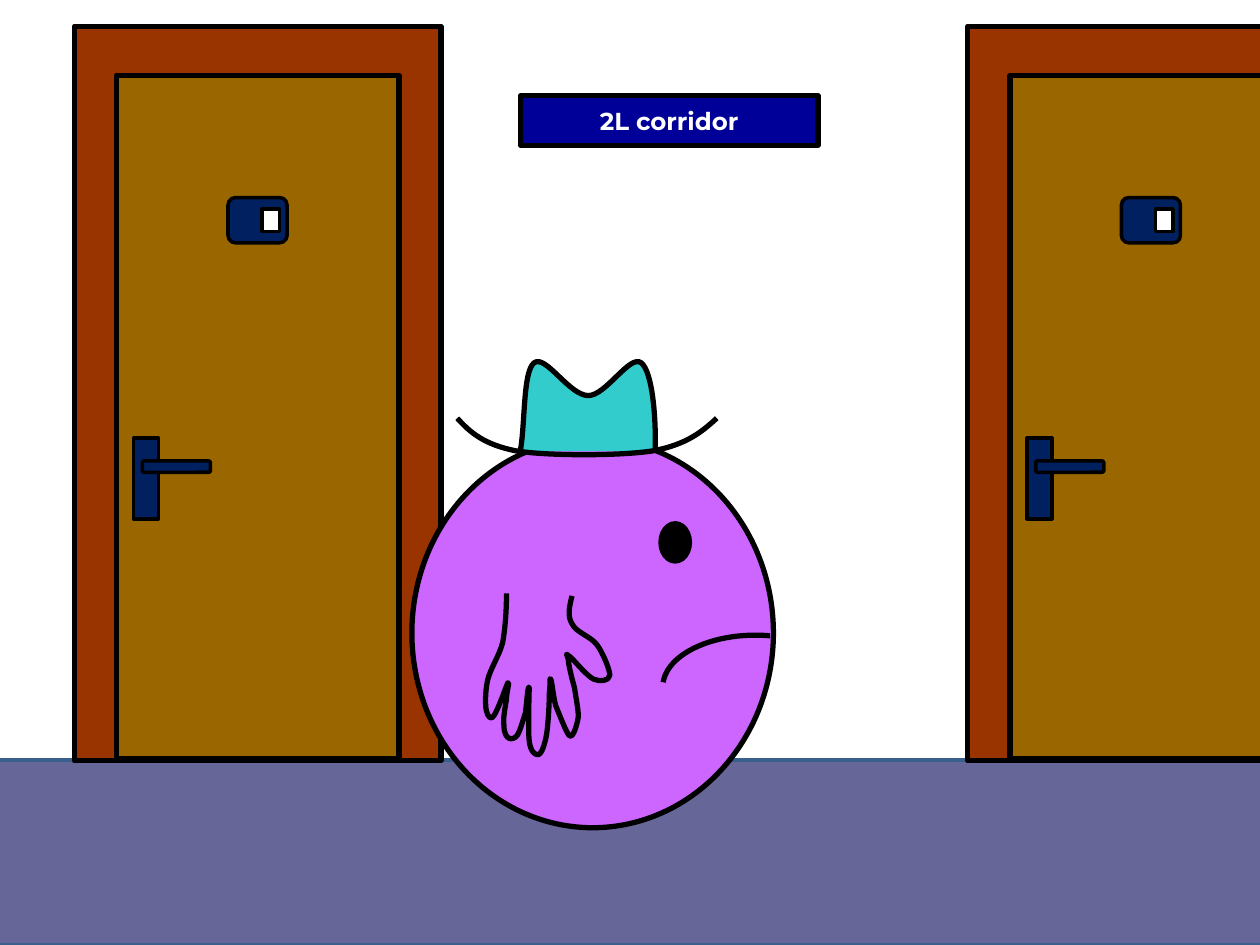
from pptx import Presentation
from pptx.util import Pt
from pptx.dml.color import RGBColor
from pptx.enum.shapes import MSO_SHAPE as Kind
from pptx.enum.text import PP_ALIGN as Align, MSO_ANCHOR as Anchor
from pptx.oxml.ns import qn
from lxml.etree import SubElement as Sub

BLACK, WHITE, NAVY, SKIN = "000000", "FFFFFF", "002060", "CC66FF"
GRID = 0.72  # points per unit of the curves below

# Each curve is a start point, then two control points and an end point a piece.
HAT = [
    (107, 77),
    (108, 52), (105, 14), (96, 7),
    (87, 0), (68, 33), (54, 33),
    (39, 33), (20, 0), (11, 7),
    (2, 14), (4, 56), (0, 77),
]
BRIM = [
    (206, 0),
    (194, 11), (182, 21), (155, 26),
    (129, 30), (72, 30), (47, 26),
    (21, 21), (10, 11), (0, 0),
]
HAND = [
    (69, 2),
    (67, 10), (65, 18), (69, 24),
    (72, 31), (84, 34), (89, 41),
    (94, 48), (99, 61), (99, 65),
    (98, 70), (91, 70), (86, 68),
    (80, 65), (70, 52), (67, 50),
    (63, 47), (65, 48), (66, 52),
    (66, 56), (69, 68), (71, 75),
    (72, 83), (74, 91), (74, 98),
    (73, 104), (70, 115), (67, 113),
    (65, 112), (59, 96), (56, 89),
    (54, 81), (53, 69), (52, 68),
    (51, 66), (52, 71), (51, 79),
    (51, 87), (50, 108), (48, 116),
    (46, 124), (44, 128), (42, 128),
    (39, 128), (36, 125), (35, 117),
    (34, 108), (35, 78), (35, 75),
    (34, 71), (33, 88), (32, 95),
    (30, 101), (28, 108), (26, 112),
    (24, 115), (21, 116), (19, 115),
    (17, 114), (15, 111), (15, 105),
    (14, 100), (16, 90), (17, 84),
    (17, 78), (20, 69), (18, 71),
    (17, 73), (10, 93), (7, 97),
    (5, 101), (2, 98), (1, 93),
    (0, 89), (0, 78), (2, 69),
    (4, 60), (11, 50), (14, 39),
    (16, 27), (17, 14), (17, 0),
]


def color(code):
    return RGBColor.from_string(code)


def style(shape, fill, width, line=BLACK):
    shape.shadow.inherit = False
    if fill:
        shape.fill.solid()
        shape.fill.fore_color.rgb = color(fill)
    else:
        shape.fill.background()
    shape.line.color.rgb = color(line)
    shape.line.width = Pt(width)
    return shape


def draw(shapes, kind, box, fill, width, line=BLACK):
    shape = shapes.add_shape(kind, *map(Pt, box))
    return style(shape, fill, width, line)


def bend(shape):
    """Turn each three straight pieces of the outline into one Bezier piece."""
    lines = shape.element.xpath(".//a:lnTo")
    outline = lines[0].getparent()
    for i in range(0, len(lines), 3):
        curve = Sub(outline, qn("a:cubicBezTo"))
        for line in lines[i:i + 3]:
            curve.append(line[0])
            outline.remove(line)


def sketch(shapes, curve, left, top, fill):
    start, *rest = [(Pt(left + x * GRID), Pt(top + y * GRID)) for x, y in curve]
    pen = shapes.build_freeform(*start)
    pen.add_line_segments(rest, close=False)
    shape = pen.convert_to_shape()
    bend(shape)
    style(shape, fill, 3)


def add_floor(shapes, box):
    draw(shapes, Kind.RECTANGLE, box, "666699", 2, "3A5F8C")


def add_door(shapes, left, top):
    parts = shapes.add_group_shape().shapes
    rect, soft = Kind.RECTANGLE, Kind.ROUNDED_RECTANGLE
    for kind, x, y, wide, high, fill, width in [
        (rect, 0, 0, 209.5, 419.8, "993300", 3),        # frame
        (rect, 24.2, 28.1, 161.3, 390.2, "996600", 3),  # panel
        (rect, 33.8, 235.4, 14.4, 46.1, NAVY, 2),       # handle plate
        (soft, 38.9, 248.4, 38.9, 6.5, NAVY, 2),        # lever
        (soft, 87.8, 97.9, 33.8, 25.9, NAVY, 2),        # slider
        (rect, 107.3, 104.4, 10.1, 13, WHITE, 2),       # window
    ]:
        draw(parts, kind, (left + x, top + y, wide, high), fill, width)


def add_sign(shapes, box, text):
    frame = draw(shapes, Kind.RECTANGLE, box, "000099", 3).text_frame
    frame.text = text
    frame.vertical_anchor = Anchor.MIDDLE
    line = frame.paragraphs[0]
    line.alignment = Align.CENTER
    font = line.runs[0].font
    font.name, font.size, font.bold = "Montserrat", Pt(14), True
    font.color.rgb = color(WHITE)


def add_figure(shapes, left, top):
    parts = shapes.add_group_shape().shapes
    draw(parts, Kind.OVAL, (left, top + 48.2, 206.6, 222.5), SKIN, 3)
    sketch(parts, HAT, left + 61.9, top, "33CCCC")
    sketch(parts, BRIM, left + 25.9, top + 36.7, None)
    draw(parts, Kind.OVAL, (left + 141.8, top + 96.5, 17.3, 22.3), BLACK, 2)
    mouth = draw(parts, Kind.ARC, (left + 143.3, top + 160.6, 105.8, 59), None, 3)
    mouth.adjustments[0], mouth.adjustments[1] = 1.67, 63.63
    mouth.rotation = 180
    sketch(parts, HAND, left + 41.8, top + 136.8, SKIN)


def main():
    deck = Presentation()
    deck.slide_width, deck.slide_height = Pt(720), Pt(540)
    shapes = deck.slides.add_slide(deck.slide_layouts[6]).shapes
    add_floor(shapes, (-65.5, 434.2, 884.2, 105.8))
    for left in (42.5, 553):
        add_door(shapes, left, 15)
    add_sign(shapes, (297.4, 54.7, 170, 28.3), "2L corridor")
    add_figure(shapes, 235.4, 202.3)
    deck.save("out.pptx")


if __name__ == "__main__":
    main()
